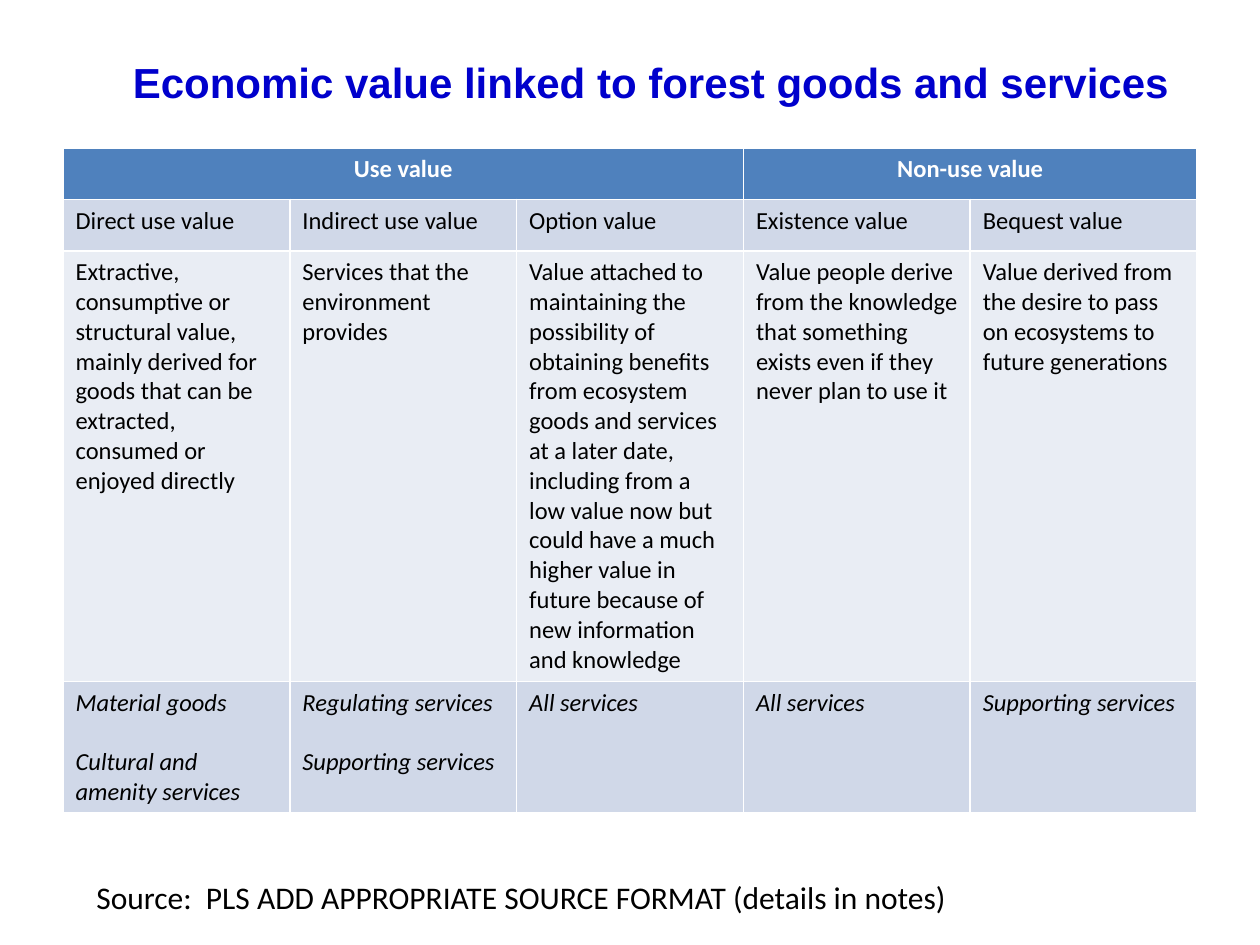
"""Build a slide with a table of the economic values of forests."""
import pptx
import pptx.util
import pptx.dml.color
import pptx.enum.text

Pt = pptx.util.Pt
RGB = pptx.dml.color.RGBColor
ALIGN = pptx.enum.text.PP_ALIGN
ANCHOR = pptx.enum.text.MSO_ANCHOR

BLUE = RGB(0x00, 0x00, 0xCC)
HEAD = RGB(0x4F, 0x81, 0xBD)
DARK = RGB(0xD0, 0xD8, 0xE8)
PALE = RGB(0xE9, 0xED, 0xF4)
WHITE = RGB(0xFF, 0xFF, 0xFF)
BLACK = RGB(0x00, 0x00, 0x00)

TITLE = "Economic value linked to forest goods and services"
SOURCE = "Source:  PLS ADD APPROPRIATE SOURCE FORMAT (details in notes)"
GROUPS = [("Use value", 3), ("Non-use value", 2)]
KINDS = ["Direct use value", "Indirect use value", "Option value",
         "Existence value", "Bequest value"]
MEANINGS = [
    "Extractive, consumptive or structural value, mainly derived for goods "
    "that can be extracted, consumed or enjoyed directly",
    "Services that the environment provides",
    "Value attached to maintaining the possibility of obtaining benefits "
    "from ecosystem goods and services at a later date, including from a "
    "low value now but could have a much higher value in future because of "
    "new information and knowledge",
    "Value people derive from the knowledge that something exists even if "
    "they never plan to use it",
    "Value derived from the desire to pass on ecosystems to future "
    "generations",
]
GOODS = ["Material goods\nCultural and amenity services",
         "Regulating services\nSupporting services",
         "All services", "All services", "Supporting services"]
BODY = [(KINDS, DARK, False), (MEANINGS, PALE, False), (GOODS, DARK, True)]
HEIGHTS = [29.5, 29.5, 246, 75]
WIDTH = 648


def write(frame, text, size=14, font="Calibri", color=BLACK, bold=False,
          italic=False, align=ALIGN.LEFT, gap=17):
    frame.word_wrap = True
    for i, line in enumerate(text.split("\n")):
        para = frame.add_paragraph() if i else frame.paragraphs[0]
        para.alignment = align
        if i:
            para.space_before = Pt(gap)
        run = para.add_run()
        run.text = line
        run.font.size = Pt(size)
        run.font.name = font
        run.font.color.rgb = color
        run.font.bold = bold
        run.font.italic = italic


def paint(cell, color):
    cell.fill.solid()
    cell.fill.fore_color.rgb = color


def main():
    deck = pptx.Presentation()
    deck.slide_width, deck.slide_height = Pt(720), Pt(540)
    slide = deck.slides.add_slide(deck.slide_layouts[6])
    shapes = slide.shapes

    title = shapes.add_textbox(Pt(24), Pt(30.5), Pt(696), Pt(32)).text_frame
    title.vertical_anchor = ANCHOR.MIDDLE
    write(title, TITLE, size=24, font="Arial", color=BLUE, bold=True,
          align=ALIGN.CENTER)

    table = shapes.add_table(len(HEIGHTS), len(KINDS), Pt(36), Pt(84.5),
                             Pt(WIDTH), Pt(sum(HEIGHTS))).table
    for row, height in zip(table.rows, HEIGHTS):
        row.height = Pt(height)
    for col in table.columns:
        col.width = Pt(WIDTH / len(KINDS))

    start = 0
    for name, span in GROUPS:
        cell = table.cell(0, start)
        cell.merge(table.cell(0, start + span - 1))
        paint(cell, HEAD)
        write(cell.text_frame, name, color=WHITE, bold=True,
              align=ALIGN.CENTER)
        start += span

    for r, (texts, color, italic) in enumerate(BODY, 1):
        for c, text in enumerate(texts):
            cell = table.cell(r, c)
            paint(cell, color)
            write(cell.text_frame, text, italic=italic)

    note = shapes.add_textbox(Pt(48), Pt(498), Pt(510), Pt(29)).text_frame
    write(note, SOURCE, size=18)
    deck.save("out.pptx")


if __name__ == "__main__":
    main()
